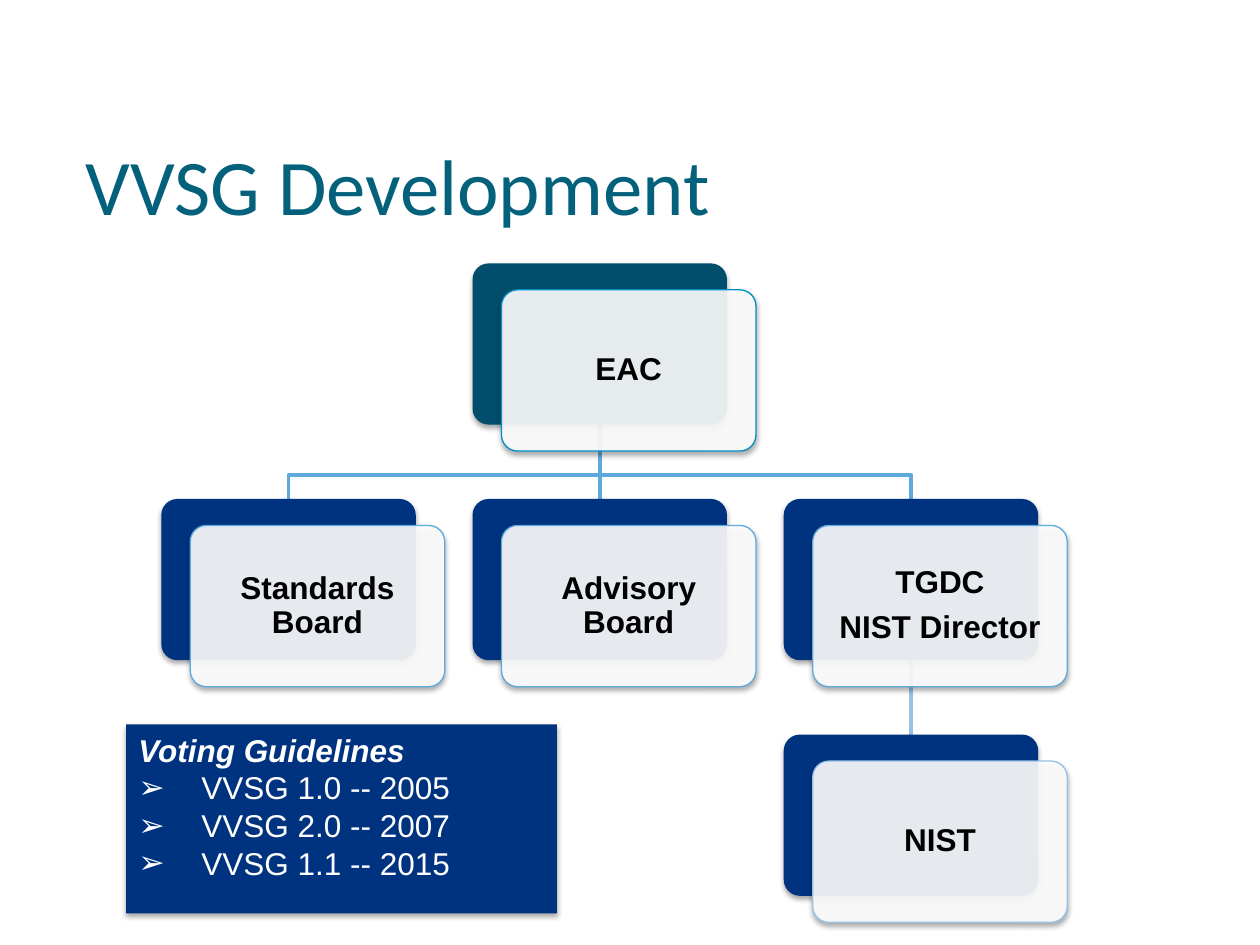
from lxml.etree import SubElement
from pptx import Presentation
from pptx.dml.color import RGBColor
from pptx.enum.shapes import MSO_CONNECTOR as CONNECTOR, MSO_SHAPE as SHAPE
from pptx.enum.text import MSO_ANCHOR as ANCHOR, PP_ALIGN as ALIGN
from pptx.oxml.ns import qn
from pptx.util import Inches, Pt

COLORS = {
    "title": "04617B", "teal": "004E6C", "navy": "00337F",
    "teal_edge": "008EC5", "blue_edge": "5EAADD", "pale_edge": "97C1E5",
    "white": "FFFFFF", "black": "000000",
}
RGB = {name: RGBColor.from_string(value) for name, value in COLORS.items()}


def add_block(kind, left, top, width, height, fill, edge=None):
    """Add a filled shape with a soft shadow below it."""
    block = slide.shapes.add_shape(
        kind, Inches(left), Inches(top), Inches(width), Inches(height))
    if kind == SHAPE.ROUNDED_RECTANGLE:
        block.adjustments[0] = 0.1
    block.fill.solid()
    block.fill.fore_color.rgb = RGB[fill]
    if edge:
        block.line.color.rgb = RGB[edge]
        block.line.width = Pt(0.75)
    else:
        block.line.fill.background()
    block.shadow.inherit = False
    effects = block._element.spPr.find(qn("a:effectLst"))
    shadow = SubElement(effects, qn("a:outerShdw"), blurRad=str(Pt(3.1)),
                        dist=str(Pt(1.8)), dir="5400000", rotWithShape="0")
    shade = SubElement(shadow, qn("a:srgbClr"), val=COLORS["black"])
    SubElement(shade, qn("a:alpha"), val="35000")
    return block


def add_run(paragraph, text, size, color, font="Arial", bold=False, italic=False):
    run = paragraph.add_run()
    run.text = text
    run.font.name, run.font.size = font, Pt(size)
    run.font.bold, run.font.italic = bold, italic
    run.font.color.rgb = RGB[color]


presentation = Presentation()
presentation.slide_width, presentation.slide_height = Inches(10), Inches(7.5)
slide = presentation.slides.add_slide(presentation.slide_layouts[6])

# Title
title = slide.shapes.add_textbox(Inches(0.58), Inches(1), Inches(6), Inches(0.92))
title.text_frame.word_wrap = True
title.text_frame.vertical_anchor = ANCHOR.MIDDLE
add_run(title.text_frame.paragraphs[0], "VVSG Development", 45, "title", "Calibri")

# Grid of the organisation chart
BOX_W, BOX_H = 2.02, 1.28
columns = [1.28 + 2.47 * i for i in range(3)]
rows = [2.09 + 1.87 * i for i in range(3)]
centers = [left + BOX_W / 2 for left in columns]

# Straight links, placed behind the boxes and joined to them later
links = []
for parent, child, column, row, edge in [
    ("TGDC", "NIST", 2, 1, "pale_edge"),
    ("EAC", "Advisory Board", 1, 0, "blue_edge"),
]:
    x = Inches(centers[column])
    link = slide.shapes.add_connector(
        CONNECTOR.STRAIGHT, x, Inches(rows[row] + BOX_H), x, Inches(rows[row + 1]))
    link.line.color.rgb = RGB[edge]
    link.line.width = Pt(2)
    SubElement(link._element.spPr, qn("a:effectLst"))
    links.append((link, parent, child))

# Bent links from EAC to the outer boards
for end in (centers[2], centers[0]):
    route = [(centers[1], rows[0] + BOX_H), (centers[1], 3.77),
             (end, 3.77), (end, rows[1])]
    points = [(Inches(x), Inches(y)) for x, y in route]
    builder = slide.shapes.build_freeform(*points[0])
    builder.add_line_segments(points[1:], close=False)
    branch = builder.convert_to_shape()
    branch.fill.background()
    branch.line.color.rgb = RGB["blue_edge"]
    branch.line.width = Pt(2)
    branch.shadow.inherit = False

# Boxes: a coloured back and a translucent card with the name
backs = {}
for column, row, lines, fill, edge in [
    (1, 0, ["EAC"], "teal", "teal_edge"),
    (0, 1, ["Standards Board"], "navy", "blue_edge"),
    (1, 1, ["Advisory Board"], "navy", "blue_edge"),
    (2, 1, ["TGDC", "NIST Director"], "navy", "blue_edge"),
    (2, 2, ["NIST"], "navy", "pale_edge"),
]:
    left, top = columns[column], rows[row]
    backs[lines[0]] = add_block(
        SHAPE.ROUNDED_RECTANGLE, left, top, BOX_W, BOX_H, fill)
    card = add_block(SHAPE.ROUNDED_RECTANGLE, left + 0.23, top + 0.21,
                     BOX_W, BOX_H, "white", edge)
    card_color = card._element.spPr.find(qn("a:solidFill")).find(qn("a:srgbClr"))
    SubElement(card_color, qn("a:alpha"), val="90000")
    frame = card.text_frame
    frame.word_wrap = True
    frame.vertical_anchor = ANCHOR.MIDDLE
    frame.margin_left = frame.margin_right = Inches(0.11)
    frame.margin_top = frame.margin_bottom = Inches(0.11)
    for i, line in enumerate(lines):
        paragraph = frame.add_paragraph() if i else frame.paragraphs[0]
        paragraph.alignment = ALIGN.CENTER
        paragraph.line_spacing = 0.9
        paragraph.space_after = Pt(6.3)
        add_run(paragraph, line, 18, "black", bold=True)

for link, parent, child in links:
    link.begin_connect(backs[parent], 2)
    link.end_connect(backs[child], 0)

# Voting guidelines panel
guidelines = add_block(SHAPE.RECTANGLE, 1, 5.75, 3.42, 1.5, "navy").text_frame
guidelines.word_wrap = True
guidelines.vertical_anchor = ANCHOR.TOP
heading = guidelines.paragraphs[0]
heading.alignment = ALIGN.LEFT
add_run(heading, "Voting Guidelines", 18, "white", bold=True, italic=True)
for version in ["VVSG 1.0 -- 2005", "VVSG 2.0 -- 2007", "VVSG 1.1 -- 2015"]:
    item = guidelines.add_paragraph()
    item.alignment = ALIGN.LEFT
    properties = item._p.get_or_add_pPr()
    properties.set("marL", str(Inches(0.5)))
    properties.set("indent", str(Inches(-0.5)))
    SubElement(properties, qn("a:buFont"), typeface="Arial")
    SubElement(properties, qn("a:buChar"), char="➢")
    add_run(item, version, 18, "white")

presentation.save("out.pptx")
